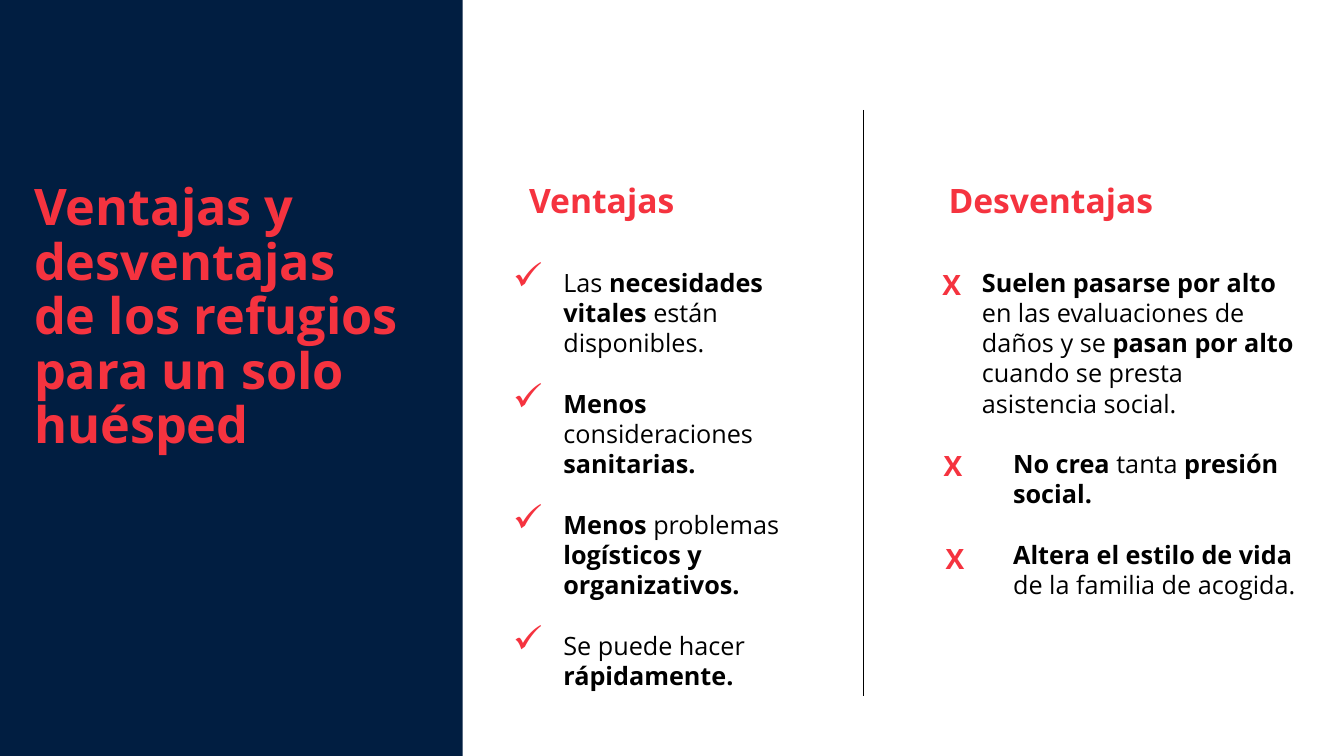
import dataclasses

import lxml.etree
import pptx
import pptx.dml.color
import pptx.enum.shapes
import pptx.enum.text
import pptx.oxml.ns
import pptx.util


@dataclasses.dataclass(frozen=True)
class Theme:
    font: str = "Open Sans"
    navy: str = "011E41"
    red: str = "F5333F"
    black: str = "000000"
    title_size: float = 36
    heading_size: float = 24
    cross_size: float = 20
    body_size: float = 18
    item_gap: float = 21.6
    rule_width: float = 0.75


def color(value):
    return pptx.dml.color.RGBColor.from_string(value)


def set_attributes(target, values):
    for name, value in values.items():
        setattr(target, name, value)


class SlideBuilder:
    """Draws on one slide; places are percentages of its width and height."""

    def __init__(self, presentation, theme):
        self.theme = theme
        self.width = presentation.slide_width
        self.height = presentation.slide_height
        self.slide = presentation.slides.add_slide(presentation.slide_layouts[6])

    def place(self, left, top, width, height):
        return [round(share * length / 100) for share, length in
                zip((left, top, width, height), (self.width, self.height) * 2)]

    def panel(self, box, fill):
        shape = self.slide.shapes.add_shape(
            pptx.enum.shapes.MSO_SHAPE.RECTANGLE, *self.place(*box))
        shape.shadow.inherit = False
        shape.fill.solid()
        shape.fill.fore_color.rgb = color(fill)
        shape.line.fill.background()

    def rule(self, left, top, bottom):
        x, y, _, length = self.place(left, top, 0, bottom - top)
        connector = self.slide.shapes.add_connector(
            pptx.enum.shapes.MSO_CONNECTOR.STRAIGHT, x, y, x, y + length)
        connector.line.color.rgb = color(self.theme.black)
        connector.line.width = pptx.util.Pt(self.theme.rule_width)
        lxml.etree.SubElement(connector.element.spPr, pptx.oxml.ns.qn("a:effectLst"))

    def text(self, box, paragraphs, size, ink, frame_format=None, paragraph_format=None):
        """Write paragraphs in which *asterisks* enclose the bold words."""
        frame = self.slide.shapes.add_textbox(*self.place(*box)).text_frame
        set_attributes(frame, {"word_wrap": True, **(frame_format or {})})
        for index, content in enumerate(paragraphs):
            paragraph = frame.paragraphs[0] if index == 0 else frame.add_paragraph()
            set_attributes(paragraph, paragraph_format or {})
            for part, words in enumerate(content.split("*")):
                if words:
                    run = paragraph.add_run()
                    run.text = words
                    set_attributes(run.font, {
                        "name": self.theme.font, "size": pptx.util.Pt(size),
                        "bold": part % 2 == 1})
                    run.font.color.rgb = color(ink)
        return frame.paragraphs

    def heading(self, box, content):
        self.text(box, [f"*{content}*"], self.theme.heading_size, self.theme.red)

    def cross(self, left, top):
        self.text((left, top, 4.5, 5.87), ["*X*"], self.theme.cross_size, self.theme.red)

    def body(self, box, items):
        return self.text(box, items, self.theme.body_size, self.theme.black,
                         paragraph_format={"space_after": pptx.util.Pt(self.theme.item_gap)})

    def indent(self, paragraph, margin, first_line=0):
        properties = paragraph._p.get_or_add_pPr()
        properties.set("marL", str(pptx.util.Inches(margin)))
        properties.set("indent", str(pptx.util.Inches(first_line)))
        return properties

    def check_list(self, box, items):
        qualified = pptx.oxml.ns.qn
        for paragraph in self.body(box, items):
            properties = self.indent(paragraph, 0.5, -0.5)
            bullet_color = lxml.etree.SubElement(properties, qualified("a:buClr"))
            lxml.etree.SubElement(bullet_color, qualified("a:srgbClr"), val=self.theme.red)
            lxml.etree.SubElement(properties, qualified("a:buSzPct"), val="150000")
            lxml.etree.SubElement(properties, qualified("a:buChar"), char="✓")


ADVANTAGES = [
    "Las *necesidades vitales *están disponibles.",
    "*Menos* consideraciones *sanitarias.*",
    "*Menos *problemas *logísticos y organizativos.*",
    "Se puede hacer *rápidamente.*",
]
DISADVANTAGES = [
    "*Suelen pasarse por alto *en las evaluaciones de daños y se "
    "*pasan por alto *cuando se presta asistencia social.",
    "*No crea *tanta *presión social.*",
    "*Altera el estilo de vida *de la familia de acogida.",
]
CROSS_PLACES = [(69.39, 34.67), (69.47, 58.67), (69.62, 70.93)]


def main():
    presentation = pptx.Presentation()
    set_attributes(presentation, {"slide_width": pptx.util.Inches(13.33),
                                  "slide_height": pptx.util.Inches(7.5)})
    theme = Theme()
    builder = SlideBuilder(presentation, theme)

    builder.panel((-0.15, -0.13, 34.58, 100.13), theme.navy)
    builder.text((1.8, 9.33, 29.41, 65.6),
                 ["*Ventajas y desventajas de los refugios para un solo huésped*"],
                 theme.title_size, theme.red,
                 {"vertical_anchor": pptx.enum.text.MSO_ANCHOR.MIDDLE},
                 {"line_spacing": 0.9})

    builder.heading((38.63, 23.2, 18.83, 6.67), "Ventajas")
    builder.heading((69.84, 23.2, 23.03, 6.67), "Desventajas")

    builder.check_list((37.43, 34.67, 25.13, 45.73), ADVANTAGES)
    disadvantages = builder.body((72.32, 34.67, 25.13, 45.73), DISADVANTAGES)
    for paragraph in disadvantages[1:]:
        builder.indent(paragraph, 0.31)
    for left, top in CROSS_PLACES:
        builder.cross(left, top)

    builder.rule(64.22, 14.53, 92)
    presentation.save("out.pptx")


if __name__ == "__main__":
    main()
